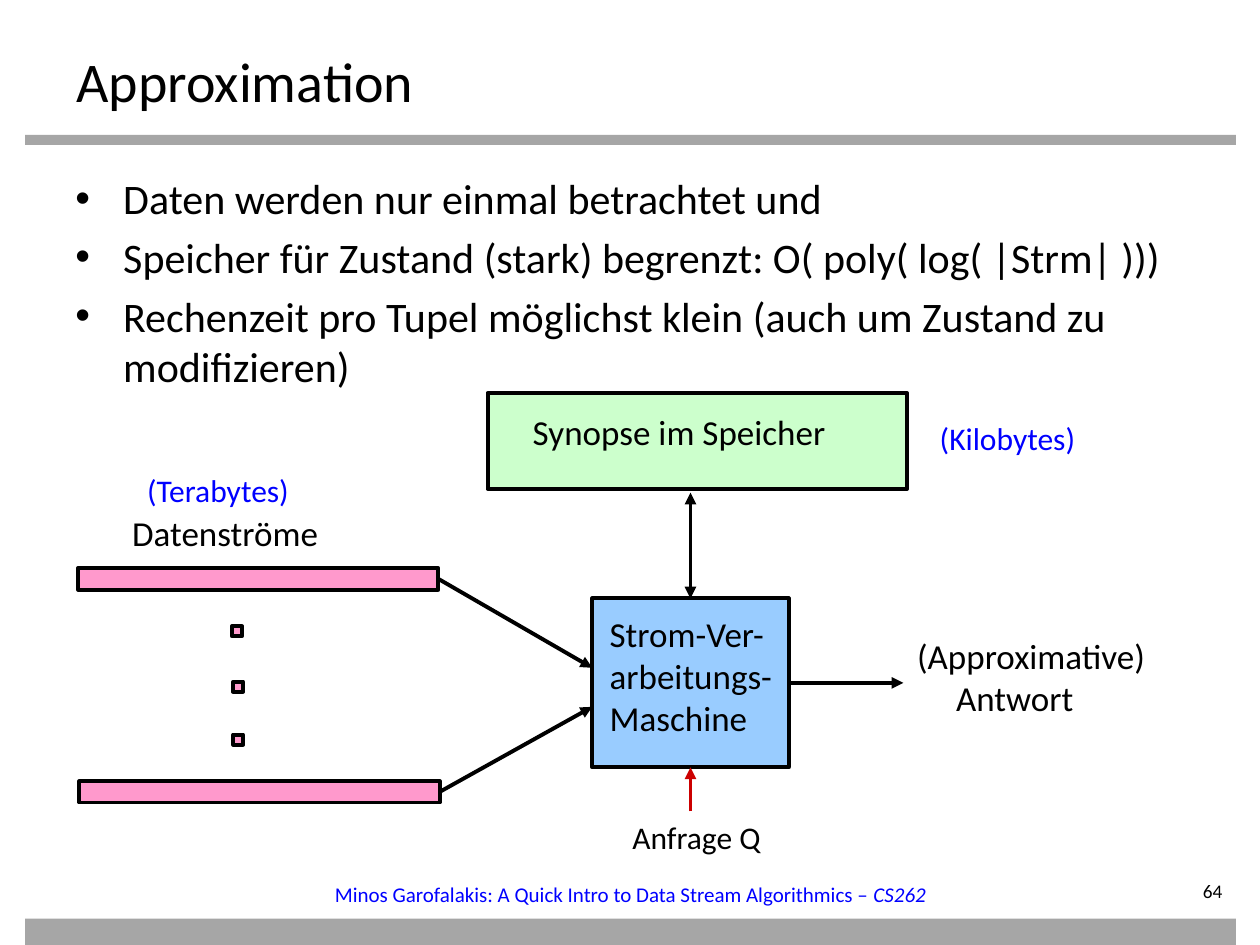
from lxml import etree
from pptx import Presentation
from pptx.dml.color import RGBColor
from pptx.enum.shapes import MSO_CONNECTOR, MSO_SHAPE
from pptx.enum.text import MSO_ANCHOR, MSO_AUTO_SIZE, PP_ALIGN
from pptx.oxml.ns import qn
from pptx.util import Inches, Pt

RECTANGLE, STRAIGHT = MSO_SHAPE.RECTANGLE, MSO_CONNECTOR.STRAIGHT
TOP, RIGHT, FIT = MSO_ANCHOR.TOP, PP_ALIGN.RIGHT, MSO_AUTO_SIZE.SHAPE_TO_FIT_TEXT
BLACK = RGBColor(0x00, 0x00, 0x00)
GRAY = RGBColor(0xA6, 0xA6, 0xA6)
PINK = RGBColor(0xFF, 0x99, 0xCC)
SKY = RGBColor(0x99, 0xCC, 0xFF)
MINT = RGBColor(0xCC, 0xFF, 0xCC)
BLUE = RGBColor(0x00, 0x00, 0xFF)
RED = RGBColor(0xCC, 0x00, 0x00)

deck = Presentation()
deck.slide_width, deck.slide_height = Inches(10), Inches(7.5)
page = deck.slides.add_slide(deck.slide_layouts[6])


def add_rect(left, top, width, height, fill, outlined=True):
    rect = page.shapes.add_shape(
        RECTANGLE, Inches(left), Inches(top), Inches(width), Inches(height))
    rect.shadow.inherit = False
    rect.fill.solid()
    rect.fill.fore_color.rgb = fill
    if outlined:
        rect.line.color.rgb = BLACK
        rect.line.width = Pt(2.25)
    else:
        rect.line.fill.background()
    return rect


def add_text(left, top, width, height, text, size, color=BLACK, wrap=False):
    box = page.shapes.add_textbox(
        Inches(left), Inches(top), Inches(width), Inches(height))
    frame = box.text_frame
    frame.text = text
    frame.word_wrap = wrap
    frame.vertical_anchor = TOP
    if not wrap:
        frame.auto_size = FIT
    for para in frame.paragraphs:
        para.font.name = "Calibri"
        para.font.size = Pt(size)
        para.font.color.rgb = color
    return frame


# Bars above the body and at the foot
add_rect(0.2, 1.07, 9.61, 0.08, GRAY, outlined=False)
add_rect(0.2, 7.29, 9.61, 0.21, GRAY, outlined=False)

# Title
title = add_text(0.51, 0.28, 9, 0.55, "Approximation", 32, wrap=True)
title.margin_top = Inches(0.09)

# Bulleted body
points = [
    "Daten werden nur einmal betrachtet und",
    "Speicher für Zustand (stark) begrenzt: O( poly( log( |Strm| )))",
    "Rechenzeit pro Tupel möglichst klein (auch um Zustand zu modifizieren)",
]
body = add_text(0.5, 1.31, 9, 1.8, points[0], 24, wrap=True)
body.margin_top = Inches(0.06)
for point in points[1:]:
    para = body.add_paragraph()
    para.text = point
    para.space_before = Pt(4.8)
for para in body.paragraphs:
    props = para._p.get_or_add_pPr()
    props.set("marL", str(Inches(0.38)))
    props.set("indent", str(-Inches(0.38)))
    etree.SubElement(props, qn("a:buFont"), typeface="Arial")
    etree.SubElement(props, qn("a:buChar"), char="•")
    para.font.name = "Calibri"
    para.font.size = Pt(24)
    para.font.color.rgb = BLACK

# Data streams, with dots between the first and the last
first_stream = add_rect(0.62, 4.51, 2.86, 0.17, PINK)
last_stream = add_rect(0.63, 6.2, 2.86, 0.17, PINK)
for left, top in [(1.84, 4.97), (1.85, 5.41), (1.85, 5.83)]:
    add_rect(left, top, 0.08, 0.08, PINK)

# Processing machine and synopsis
machine = add_rect(4.7, 4.75, 1.56, 1.34, SKY)
add_rect(3.87, 3.12, 3.33, 0.76, MINT)

# Arrows: start, end, colour, joined start, joined end, two-headed
arrows = [
    ((3.48, 4.59), (4.7, 5.3), BLACK, (first_stream, 3), None, False),
    ((3.49, 6.28), (4.7, 5.61), BLACK, (last_stream, 3), None, False),
    ((6.26, 5.42), (7.17, 5.42), BLACK, (machine, 3), None, False),
    ((5.48, 3.91), (5.48, 4.75), BLACK, None, (machine, 0), True),
    ((5.48, 6.44), (5.48, 6.09), RED, None, (machine, 2), False),
]
for start, end, color, joined_start, joined_end, two_headed in arrows:
    arrow = page.shapes.add_connector(
        STRAIGHT, *(Inches(value) for value in start + end))
    if joined_start:
        arrow.begin_connect(*joined_start)
    if joined_end:
        arrow.end_connect(*joined_end)
    arrow.line.color.rgb = color
    arrow.line.width = Pt(2.25)
    line = arrow.line._get_or_add_ln()
    if two_headed:
        etree.SubElement(line, qn("a:headEnd"), type="triangle")
    etree.SubElement(line, qn("a:tailEnd"), type="triangle")
    etree.SubElement(arrow._element.spPr, qn("a:effectLst"))

# Diagram labels
add_text(4.74, 4.81, 1.55, 1.11, "Strom-Ver-\varbeitungs-\vMaschine", 20)
add_text(4.13, 3.21, 2.67, 0.44, "Synopse im Speicher", 20)
add_text(0.95, 4.01, 1.73, 0.44, "Datenströme", 20)
add_text(1.07, 3.69, 1.37, 0.4, "(Terabytes)", 18, BLUE)
add_text(7.36, 3.28, 1.31, 0.4, "(Kilobytes)", 18, BLUE)
add_text(4.92, 6.44, 1.28, 0.4, "Anfrage Q", 18)
answer = add_text(7.18, 4.99, 2.08, 0.77, "(Approximative)\nAntwort", 20)
answer.paragraphs[1]._p.get_or_add_pPr().set("marL", str(Inches(0.31)))

# Footer and page number
footer = add_text(
    2.56, 6.95, 5.08, 0.5,
    "Minos Garofalakis: A Quick Intro to Data Stream Algorithmics – ",
    12, BLUE, wrap=True)
span = footer.paragraphs[0].add_run()
span.text = "CS262"
span.font.italic = True

number = add_text(8.7, 6.98, 1.1, 0.22, "64", 11, wrap=True)
number.margin_left = number.margin_top = number.margin_bottom = 0
number.paragraphs[0].alignment = RIGHT

deck.save("out.pptx")
